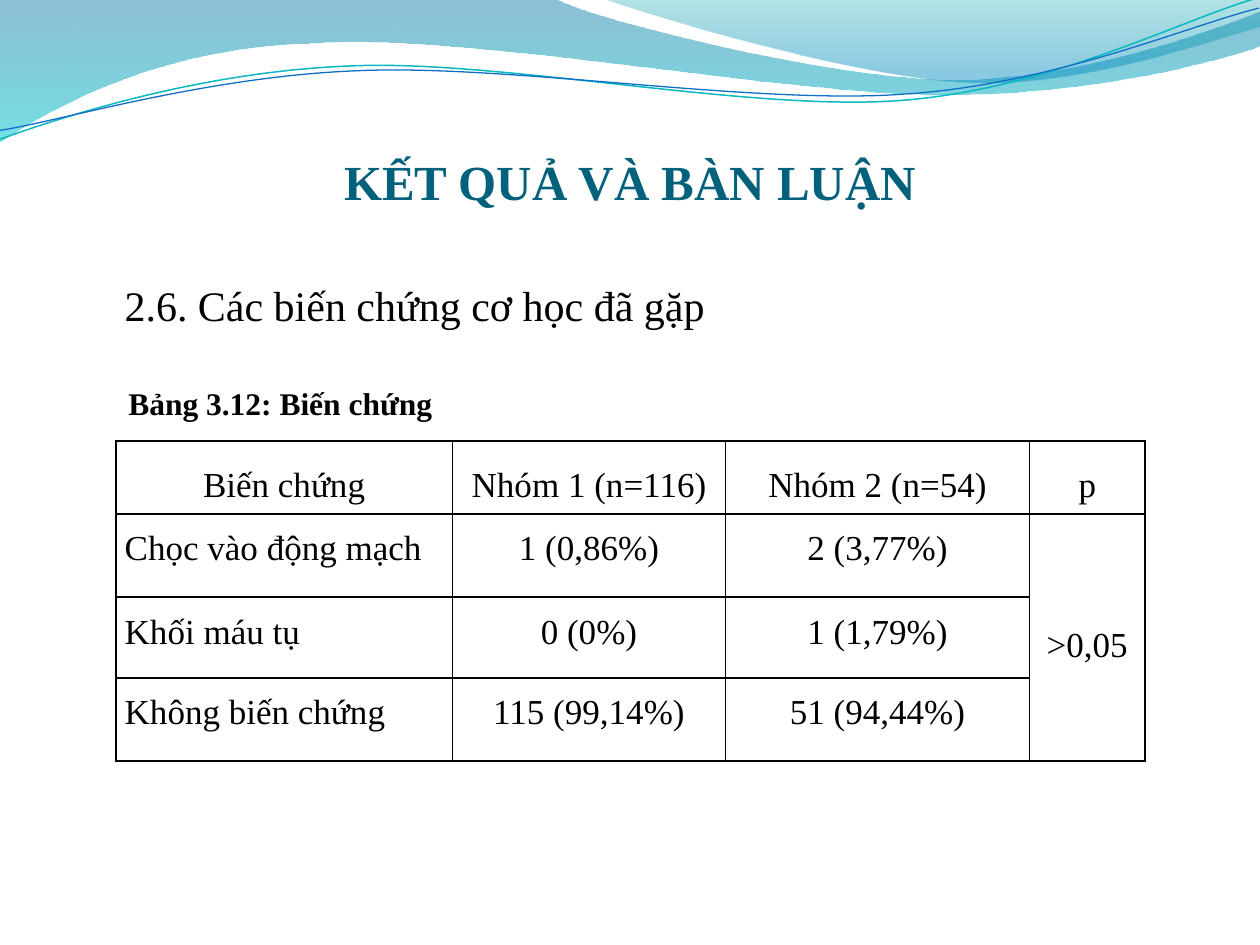
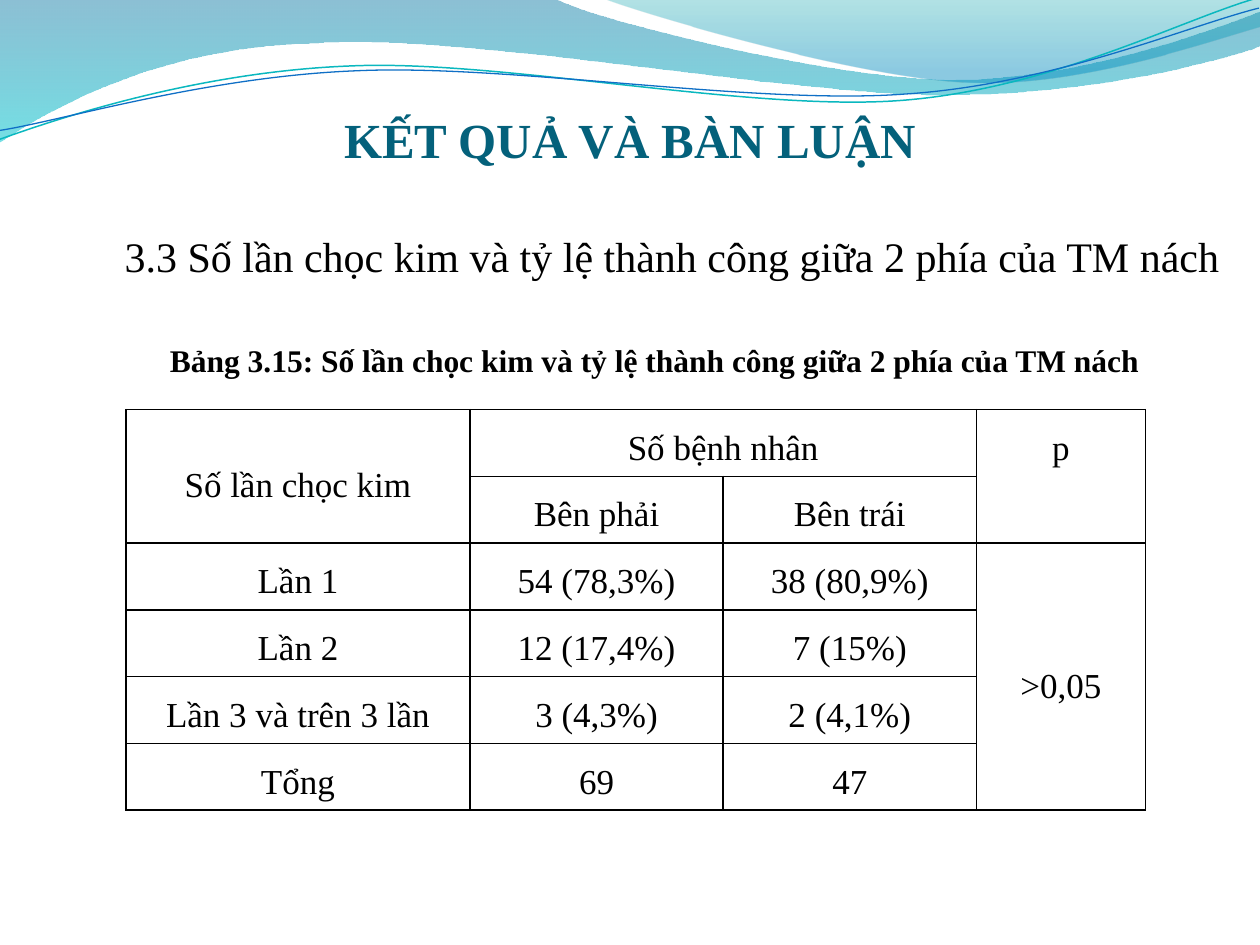
"""Build two result slides with a wave header, a heading, a caption and a table."""
from dataclasses import dataclass

from lxml import etree
from pptx import Presentation
from pptx import util as u
from pptx.dml.color import RGBColor
from pptx.enum import text
from pptx.oxml.ns import qn


@dataclass(frozen=True)
class Theme:
    font: str = "Times New Roman"
    title: str = "04617B"
    body: str = "000000"
    title_size: int = 28
    heading_size: int = 24
    caption_size: int = 18
    table_size: int = 20
    border_points: float = 1


theme = Theme()
LEFT, CENTER = text.PP_ALIGN.LEFT, text.PP_ALIGN.CENTER
TOP, MIDDLE, BOTTOM = (text.MSO_ANCHOR.TOP, text.MSO_ANCHOR.MIDDLE,
                       text.MSO_ANCHOR.BOTTOM)

BANDS = [
    {"outline": [[(0, 0)], [(4.4, -0.01)],
                 [(4.76, 0.17), (6.64, 0.63), (7.58, 0.63)],
                 [(8.53, 0.63), (9.58, 0.26), (10, 0.09)], [(10.01, 0.36)],
                 [(9.83, 0.44), (8.7, 0.76), (7.46, 0.75)],
                 [(6.22, 0.75), (3.82, 0.28), (2.57, 0.34)],
                 [(1.29, 0.36), (0.46, 0.83), (-0.01, 1.13)], [(0, 0)]],
     "stops": [(0, "0074A1", 45), (1, "00C6CF", 55)]},
    {"outline": [[(4.79, -0.01)],
                 [(5.09, 0.11), (6.82, 0.62), (7.69, 0.65)],
                 [(8.56, 0.69), (9.61, 0.32), (10, 0.21)], [(10, 0)],
                 [(4.79, -0.01)]],
     "stops": [(0, "00A1A9", 30), (0.8, "008BBF", 45)]},
    {"outline": [[(-0.02, 0.87)],
                 [(0.47, 0.72), (1.58, 0.41), (2.78, 0.42)],
                 [(3.96, 0.42), (5.91, 0.93), (7.12, 0.9)],
                 [(8.32, 0.87), (9.4, 0.36), (10, 0.22)]],
     "line": ("0AB8BF", 0.85)},
    {"outline": [[(-0.02, 0.8)],
                 [(0.46, 0.75), (1.64, 0.45), (2.83, 0.46)],
                 [(4.03, 0.46), (5.96, 0.88), (7.16, 0.85)],
                 [(8.35, 0.83), (9.42, 0.42), (10.01, 0.3)]],
     "line": ("0F6FC6", 0.75)},
]
LINE_ROTATION = 357.3

SLIDES = [
    {"title_top": 1.09,
     "heading": ("2.6. Các biến chứng cơ học đã gặp", (0.89, 2.17, 4.93, 0.5), 1),
     "caption": ("Bảng 3.12: Biến chứng", (0.92, 3, 2.64, 0.4)),
     "table_at": (0.92, 3.5),
     "columns": [2.67, 2.17, 2.41, 0.92],
     "heights": [0.58, 0.66, 0.64, 0.66],
     "spacing": 1.4,
     "rows": [["Biến chứng", "Nhóm 1 (n=116)", "Nhóm 2 (n=54)", "p"],
              ["Chọc vào động mạch", "1 (0,86%)", "2 (3,77%)", ">0,05"],
              ["Khối máu tụ", "0 (0%)", "1 (1,79%)", None],
              ["Không biến chứng", "115 (99,14%)", "51 (94,44%)", None]],
     "merges": [((1, 3), (3, 3))],
     "middle": [(0, 0), (0, 1), (0, 2), (0, 3), (1, 3)],
     "left": [(1, 0), (2, 0), (3, 0)]},
    {"title_top": 0.76,
     "heading": ("3.3 Số lần chọc kim và tỷ lệ thành công giữa 2 phía của TM nách",
                 (0.89, 1.58, 8.97, 0.63), 1.5),
     "caption": ("Bảng 3.15: Số lần chọc kim và tỷ lệ thành công giữa 2 phía của TM nách",
                 (1.25, 2.66, 7.97, 0.4)),
     "table_at": (1, 3.25),
     "columns": [2.73, 2.01, 2.01, 1.34],
     "heights": [0.53] * 6,
     "spacing": 1.5,
     "rows": [["Số lần chọc kim", "Số bệnh nhân", None, "p"],
              [None, "Bên phải", "Bên trái", None],
              ["Lần 1", "54 (78,3%)", "38 (80,9%)", ">0,05"],
              ["Lần 2", "12 (17,4%)", "7 (15%)", None],
              ["Lần 3 và trên 3 lần", "3 (4,3%)", "2 (4,1%)", None],
              ["Tổng", "69", "47", None]],
     "merges": [((0, 0), (1, 0)), ((0, 1), (0, 2)), ((0, 3), (1, 3)),
                ((2, 3), (5, 3))],
     "middle": [(0, 0), (2, 3)],
     "left": []},
]


def draw_outline(slide, outline, closed):
    """Add a freeform whose three-point segments are cubic curves."""
    points = [(u.Inches(x), u.Inches(y)) for segment in outline for x, y in segment]
    builder = slide.shapes.build_freeform(*points[0])
    builder.add_line_segments(points[1:], close=closed)
    shape = builder.convert_to_shape()
    steps = iter(list(shape.element.iter(qn("a:lnTo"))))
    for segment in outline[1:]:
        corners = [next(steps) for _ in segment]
        if len(corners) == 3:
            curve = etree.Element(qn("a:cubicBezTo"))
            corners[0].addprevious(curve)
            for corner in corners:
                curve.append(corner[0])
                corner.getparent().remove(corner)
    shape.shadow.inherit = False
    return shape


def write(frame, words, size, colour=theme.body, bold=False, **paragraph_format):
    """Put one formatted paragraph into a text frame."""
    paragraph = frame.paragraphs[0]
    for name, value in paragraph_format.items():
        setattr(paragraph, name, value)
    run = paragraph.add_run()
    run.text = words
    for name, value in {"name": theme.font, "size": u.Pt(size), "bold": bold}.items():
        setattr(run.font, name, value)
    run.font.color.rgb = RGBColor.from_string(colour)


presentation = Presentation()
presentation.slide_width, presentation.slide_height = u.Inches(10), u.Inches(7.5)

for content in SLIDES:
    slide = presentation.slides.add_slide(presentation.slide_layouts[6])

    for band in BANDS:
        shape = draw_outline(slide, band["outline"], "stops" in band)
        if "stops" in band:
            shape.line.fill.background()
            shape.fill.gradient()
            shape.fill.gradient_angle = 270
            for stop, (position, colour, _) in zip(shape.fill.gradient_stops, band["stops"]):
                stop.position = position
                stop.color.rgb = RGBColor.from_string(colour)
            colours = shape.element.spPr.iter(qn("a:srgbClr"))
            for element, (_, _, opacity) in zip(colours, band["stops"]):
                etree.SubElement(element, qn("a:alpha"), val=str(opacity * 1000))
        else:
            colour, line_points = band["line"]
            shape.rotation = LINE_ROTATION
            shape.fill.background()
            shape.line.color.rgb = RGBColor.from_string(colour)
            shape.line.width = u.Pt(line_points)

    title = slide.shapes.add_textbox(
        *map(u.Inches, (0.5, content["title_top"], 9, 0.58))).text_frame
    for name, value in {"word_wrap": True, "vertical_anchor": BOTTOM, "margin_left": 0,
                        "margin_right": 0, "margin_bottom": 0}.items():
        setattr(title, name, value)
    write(title, "KẾT QUẢ VÀ BÀN LUẬN", theme.title_size, theme.title, True,
          alignment=CENTER)

    heading, heading_box, heading_spacing = content["heading"]
    caption, caption_box = content["caption"]
    for words, box, size, bold, spacing in (
            (heading, heading_box, theme.heading_size, False, heading_spacing),
            (caption, caption_box, theme.caption_size, True, 1)):
        frame = slide.shapes.add_textbox(*map(u.Inches, box)).text_frame
        frame.word_wrap = False
        frame.auto_size = text.MSO_AUTO_SIZE.SHAPE_TO_FIT_TEXT
        write(frame, words, size, bold=bold, line_spacing=spacing)

    columns, heights = content["columns"], content["heights"]
    table = slide.shapes.add_table(
        len(heights), len(columns),
        *map(u.Inches, (*content["table_at"], sum(columns), sum(heights)))).table
    table.first_row = table.horz_banding = False
    for column, width in zip(table.columns, columns):
        column.width = u.Inches(width)
    for row, height in zip(table.rows, heights):
        row.height = u.Inches(height)
    for first, last in content["merges"]:
        table.cell(*first).merge(table.cell(*last))

    for row_index, row in enumerate(content["rows"]):
        for column_index, words in enumerate(row):
            place = (row_index, column_index)
            cell = table.cell(*place)
            for name, value in {
                    "margin_left": u.Inches(0.07), "margin_right": u.Inches(0.07),
                    "margin_top": 0, "margin_bottom": 0,
                    "vertical_anchor": MIDDLE if place in content["middle"] else TOP}.items():
                setattr(cell, name, value)
            cell.fill.background()
            properties = cell._tc.get_or_add_tcPr()
            for order, side in enumerate(("a:lnL", "a:lnR", "a:lnT", "a:lnB")):
                border = etree.Element(qn(side), w=str(u.Pt(theme.border_points)))
                solid = etree.SubElement(border, qn("a:solidFill"))
                etree.SubElement(solid, qn("a:srgbClr"), val=theme.body)
                properties.insert(order, border)
            if words:
                write(cell.text_frame, words, theme.table_size,
                      alignment=LEFT if place in content["left"] else CENTER,
                      line_spacing=content["spacing"], space_before=u.Pt(6))

presentation.save("out.pptx")
